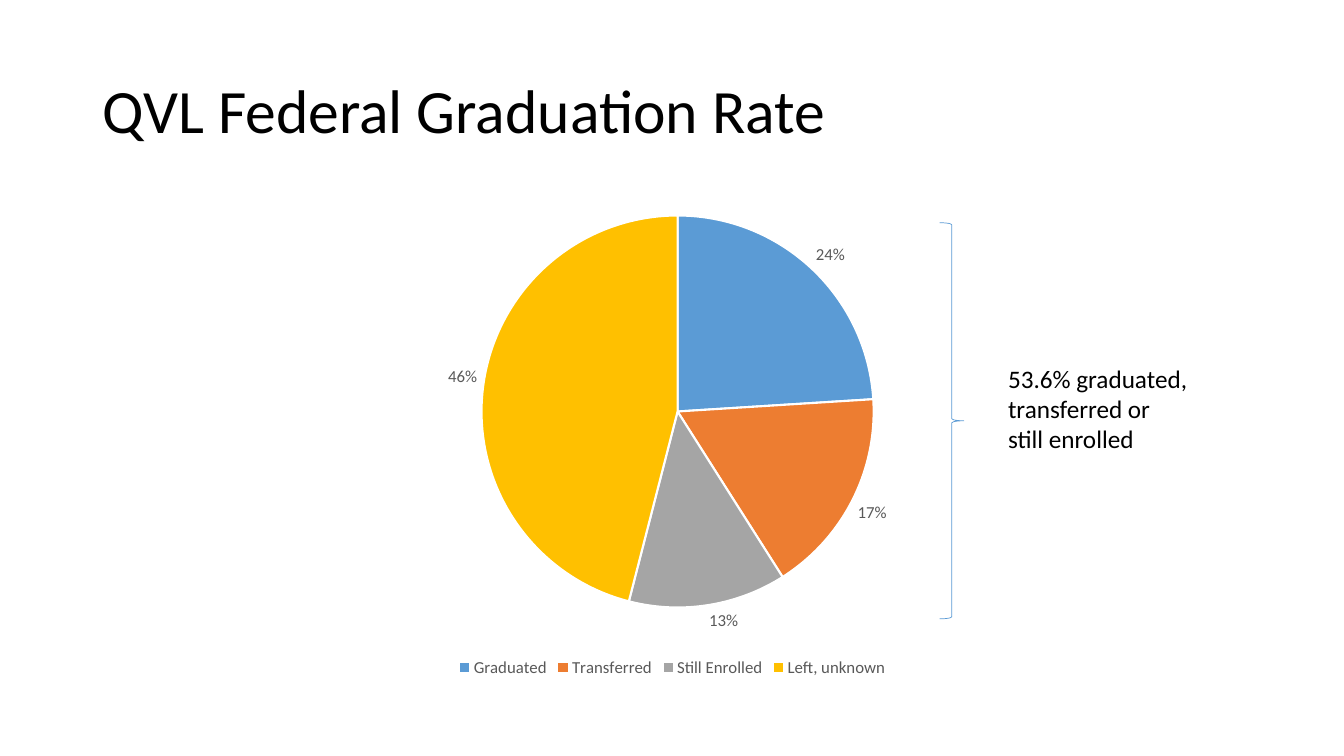
import pptx
import pptx.chart.data
import pptx.dml.color
import pptx.enum.chart
import pptx.enum.shapes
import pptx.enum.text
import pptx.util

RGBColor = pptx.dml.color.RGBColor
BLACK = RGBColor(0x00, 0x00, 0x00)
WHITE = RGBColor(0xFF, 0xFF, 0xFF)
GREY = RGBColor(0x59, 0x59, 0x59)
BLUE = RGBColor(0x5B, 0x9B, 0xD5)
ORANGE = RGBColor(0xED, 0x7D, 0x31)
SILVER = RGBColor(0xA5, 0xA5, 0xA5)
GOLD = RGBColor(0xFF, 0xC0, 0x00)

Inches, Pt = pptx.util.Inches, pptx.util.Pt
MARGIN, CONTENT_WIDTH = Inches(0.92), Inches(11.5)

TITLE_FONT = {"name": "Calibri", "size": Pt(44)}
NOTE_FONT = {"name": "Calibri", "size": Pt(18)}
CHART_FONT = {"name": "Calibri", "size": Pt(12)}

OUTCOMES = [
    ("Graduated", 24, BLUE),
    ("Transferred", 17, ORANGE),
    ("Still Enrolled", 13, SILVER),
    ("Left, unknown", 46, GOLD),
]


def format_font(font, values, color):
    for name, value in values.items():
        setattr(font, name, value)
    font.color.rgb = color


def add_text(box, lines, values, anchor, wrap, line_spacing):
    """Add a text box with one paragraph per line."""
    frame = slide.shapes.add_textbox(*box).text_frame
    frame.word_wrap = wrap
    frame.vertical_anchor = anchor
    frame.text = "\n".join(lines)
    for paragraph in frame.paragraphs:
        paragraph.line_spacing = line_spacing
        format_font(paragraph.runs[0].font, values, BLACK)


presentation = pptx.Presentation()
presentation.slide_width = Inches(13.33)
presentation.slide_height = Inches(7.5)
slide = presentation.slides.add_slide(presentation.slide_layouts[6])

# Title
add_text((MARGIN, Inches(0.4), CONTENT_WIDTH, Inches(1.45)),
         ["QVL Federal Graduation Rate"], TITLE_FONT,
         pptx.enum.text.MSO_ANCHOR.MIDDLE, True, 0.9)

# Pie of student outcomes
chart_data = pptx.chart.data.CategoryChartData()
chart_data.categories = [name for name, _, _ in OUTCOMES]
chart_data.add_series("Series 1", [value for _, value, _ in OUTCOMES])
chart = slide.shapes.add_chart(
    pptx.enum.chart.XL_CHART_TYPE.PIE,
    MARGIN, Inches(2), CONTENT_WIDTH, Inches(4.76), chart_data).chart
chart.has_title = False
format_font(chart.font, CHART_FONT, GREY)

chart.has_legend = True
chart.legend.position = pptx.enum.chart.XL_LEGEND_POSITION.BOTTOM
chart.legend.include_in_layout = False
format_font(chart.legend.font, CHART_FONT, GREY)

plot = chart.plots[0]
plot.vary_by_categories = True
for index, (_, _, color) in enumerate(OUTCOMES):
    slice_format = plot.series[0].points[index].format
    slice_format.fill.solid()
    slice_format.fill.fore_color.rgb = color
    slice_format.line.color.rgb = WHITE
    slice_format.line.width = Pt(1.5)

plot.has_data_labels = True
label_format = {
    "show_percentage": True,
    "show_value": False,
    "number_format": "0%",
    "number_format_is_linked": False,
    "position": pptx.enum.chart.XL_LABEL_POSITION.OUTSIDE_END,
}
for name, value in label_format.items():
    setattr(plot.data_labels, name, value)
format_font(plot.data_labels.font, CHART_FONT, GREY)

# Brace and its note
brace = slide.shapes.add_shape(
    pptx.enum.shapes.MSO_SHAPE.RIGHT_BRACE,
    Inches(9.32), Inches(2.21), Inches(0.24), Inches(3.93))
brace.shadow.inherit = False
brace.fill.background()
brace.line.color.rgb = BLUE
brace.line.width = Pt(0.5)

add_text((Inches(9.9), Inches(3.55), Inches(2.06), Inches(1.01)),
         ["53.6% graduated,", "transferred or", "still enrolled"], NOTE_FONT,
         pptx.enum.text.MSO_ANCHOR.TOP, False, 1.0)

presentation.save("out.pptx")
